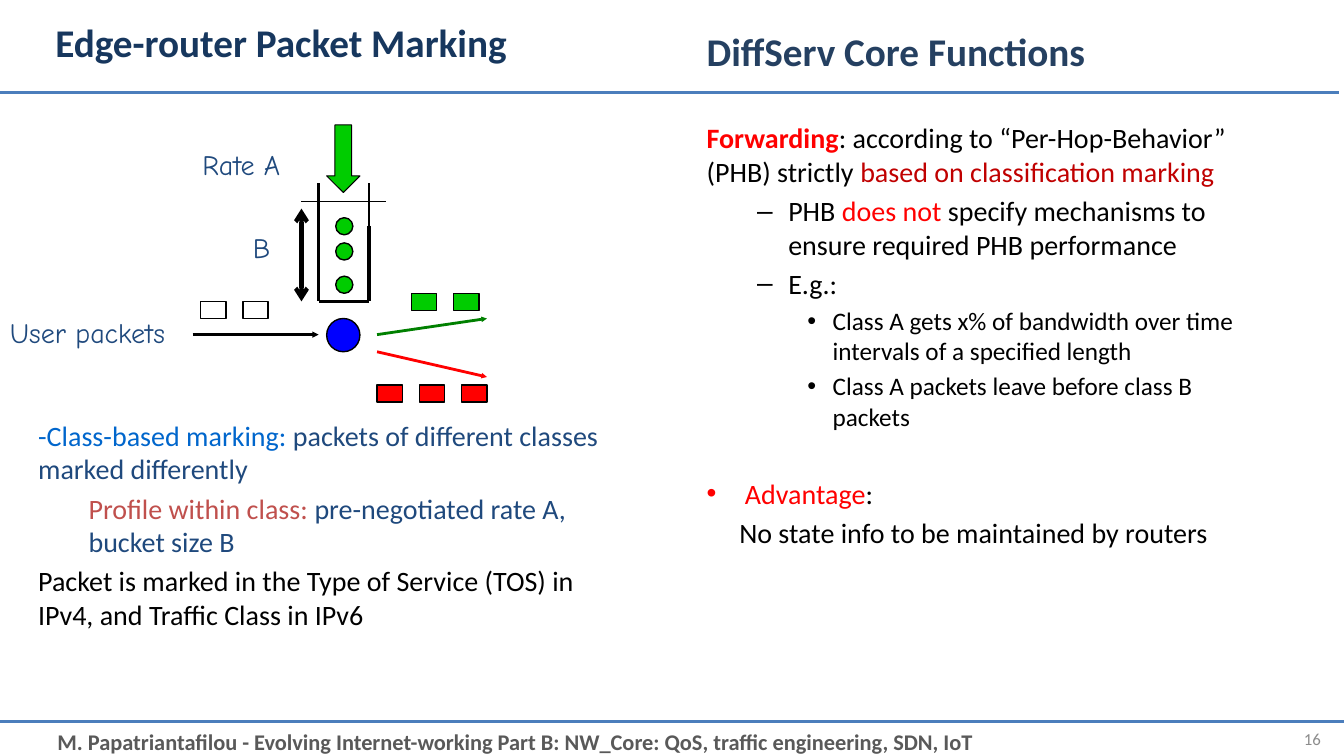
"""Build a slide on packet marking at edge routers and DiffServ core functions."""
from pptx import Presentation
from pptx.dml.color import RGBColor
from pptx.enum.shapes import MSO_CONNECTOR, MSO_SHAPE
from pptx.enum.text import MSO_ANCHOR, MSO_AUTO_SIZE, PP_ALIGN
from pptx.oxml.ns import qn
from pptx.util import Inches, Pt
from lxml.etree import SubElement

HUES = {
    "black": "000000", "white": "FFFFFF", "rule": "4B7EBC", "foot": "595959",
    "page": "8C8C8C", "title": "17375E", "core": "254061", "navy": "1F497D",
    "blue": "0066CC", "brick": "C0504D", "red": "FF0000", "wine": "C00000",
    "green": "00CC00", "leaf": "008000", "router": "0000FF",
}

SUB = {"lvl": 1, "left": 0.81, "hang": -0.31, "mark": "–"}
LEAF = {"lvl": 2, "left": 1.25, "hang": -0.25, "mark": "•", "size": 18, "gap": 3.6}

EDGE = [
    ([("-Class-based marking:", "blue"),
      (" packets of different classes marked differently", "navy")], {}),
    ([("Profile within class: ", "brick"),
      ("pre-negotiated rate A, bucket size B", "navy")], {"lvl": 1, "left": 0.5}),
    ([("Packet is marked in the Type of Service (TOS) in IPv4, "
       "and Traffic Class in IPv6", "black")], {}),
]
CORE = [
    ([("Forwarding", "red", True),
      (": according to “Per-Hop-Behavior” (PHB) strictly ", "black"),
      ("based on classification marking", "wine")], {}),
    ([("PHB ", "black"), ("does not", "red"),
      (" specify mechanisms to ensure required PHB performance", "black")], SUB),
    ([("E.g.:", "black")], SUB),
    ([("Class A gets x% of bandwidth over time intervals of a specified length",
       "black")], LEAF),
    ([("Class A packets leave before class B packets", "black")], LEAF),
    ([("Advantage", "red"), (":", "black")],
     {"left": 0.38, "hang": -0.38, "mark": "•", "gap": 32}),
    ([("No state info to be maintained by routers", "black")],
     {"left": 0.38, "hang": -0.38, "align": PP_ALIGN.CENTER}),
]
FOOT = ("M. Papatriantafilou - Evolving Internet-working Part B: NW_Core: QoS, "
        "traffic engineering, SDN, IoT")
TEXTS = [
    ((0.47, 7.17, 12.34, 0.37), FOOT,
     {"size": 16, "hue": "foot", "bold": True, "grow": True}),
    ((12.13, 7.13, 1.07, 0.4), "16",
     {"size": 12, "hue": "page", "mid": True, "align": PP_ALIGN.RIGHT}),
    ((0.45, 0.04, 8.5, 0.75), "Edge-router Packet Marking",
     {"size": 28, "hue": "title", "bold": True, "mid": True}),
    ((6.91, 0.22, 5.65, 0.63), "DiffServ Core Functions",
     {"size": 28, "hue": "core", "bold": True}),
    ((0.28, 4.1, 6.11, 2), EDGE, {}),
    ((6.91, 1.15, 5.49, 5.51), CORE, {}),
]
LABELS = [
    ((0, 3.08, 2.33, 0.43), "User packets"),
    ((1.91, 1.41, 1.25, 0.43), "Rate A"),
    ((2.41, 2.24, 0.38, 0.43), "B"),
]

RULES = [(0, 7.16), (-0.05, 0.92)]
STEP = 0.42
ROWS = [(4.08, 2.91, 2, "green"), (3.74, 3.82, 3, "red"), (1.99, 2.99, 2, "white")]
TOKENS = [2.16, 2.41, 2.74]
WALLS = [3.16, 3.66]
RIM, JOINT, FLOOR = 1.82, 2.24, 2.99
FLOWS = [
    ((1.91, 3.32, 3.16, 3.32), "black", 2.25),
    ((3.74, 3.49, 4.83, 3.74), "red", 2),
    ((3.74, 3.32, 4.83, 3.16), "leaf", 2),
]

deck = Presentation()
deck.slide_width, deck.slide_height = Inches(13.33), Inches(7.5)
slide = deck.slides.add_slide(deck.slide_layouts[6])


def tint(name):
    return RGBColor.from_string(HUES[name])


def write(box, text, size=20, hue="black", bold=False, font="Calibri",
          align=None, mid=False, grow=False):
    frame = slide.shapes.add_textbox(*map(Inches, box)).text_frame
    frame.word_wrap = True
    if grow:
        frame.auto_size = MSO_AUTO_SIZE.SHAPE_TO_FIT_TEXT
    if mid:
        frame.vertical_anchor = MSO_ANCHOR.MIDDLE
    paras = [([(text, hue, bold)], {"align": align})] if isinstance(text, str) else text
    for i, (runs, form) in enumerate(paras):
        para = frame.add_paragraph() if i else frame.paragraphs[0]
        para.level = form.get("lvl", 0)
        if form.get("align"):
            para.alignment = form["align"]
        if i:
            para.space_before = Pt(form.get("gap", 4))
        props = para._p.get_or_add_pPr()
        props.set("marL", str(Inches(form.get("left", 0))))
        props.set("indent", str(Inches(form.get("hang", 0))))
        if "mark" in form:
            SubElement(props, qn("a:buFont")).set("typeface", "Arial")
            SubElement(props, qn("a:buChar")).set("char", form["mark"])
        for words, shade, *heavy in runs:
            run = para.add_run()
            run.text = words
            run.font.name = font
            run.font.size = Pt(form.get("size", size))
            run.font.bold = any(heavy)
            run.font.color.rgb = tint(shade)


def line(ends, hue="black", width=2.25, head=None, tail=None, scale="med"):
    link = slide.shapes.add_connector(MSO_CONNECTOR.STRAIGHT, *map(Inches, ends))
    link.line.color.rgb = tint(hue)
    link.line.width = Pt(width)
    pen = link.line._get_or_add_ln()
    for tag, kind in (("a:headEnd", head), ("a:tailEnd", tail)):
        if kind:
            tip = SubElement(pen, qn(tag))
            for key, value in (("type", kind), ("w", scale), ("len", scale)):
                tip.set(key, value)
    SubElement(link._element.spPr, qn("a:effectLst"))


def draw(kind, box, hue, width=1):
    shape = slide.shapes.add_shape(kind, *map(Inches, box))
    shape.shadow.inherit = False
    shape.fill.solid()
    shape.fill.fore_color.rgb = tint(hue)
    shape.line.color.rgb = tint("black")
    shape.line.width = Pt(width)


for x, y in RULES:
    line((x, y, x + 13.33, y), "rule")
for box, text, form in TEXTS:
    write(box, text, **form)
for box, text in LABELS:
    write(box, text, hue="navy", font="Comic Neue", grow=True)

for x, y, count, hue in ROWS:
    for i in range(count):
        draw(MSO_SHAPE.RECTANGLE, (x + i * STEP, y, 0.25, 0.17), hue)

for x in WALLS:
    line((x, JOINT, x, FLOOR))
    line((x, JOINT, x, RIM), width=2)
line((WALLS[0], FLOOR, WALLS[1], FLOOR))
for y in TOKENS:
    draw(MSO_SHAPE.OVAL, (3.33, y, 0.17, 0.17), "green")
draw(MSO_SHAPE.OVAL, (3.24, 3.16, 0.33, 0.33), "router")
draw(MSO_SHAPE.DOWN_ARROW, (3.24, 1.24, 0.33, 0.67), "green", 0.75)

for ends, hue, width in FLOWS:
    line(ends, hue, width, tail="triangle", scale="sm")
line((2.99, 2, 3.83, 2), width=0.75)
line((2.99, 2.07, 2.99, FLOOR), width=3, head="arrow", tail="arrow")

deck.save("out.pptx")
